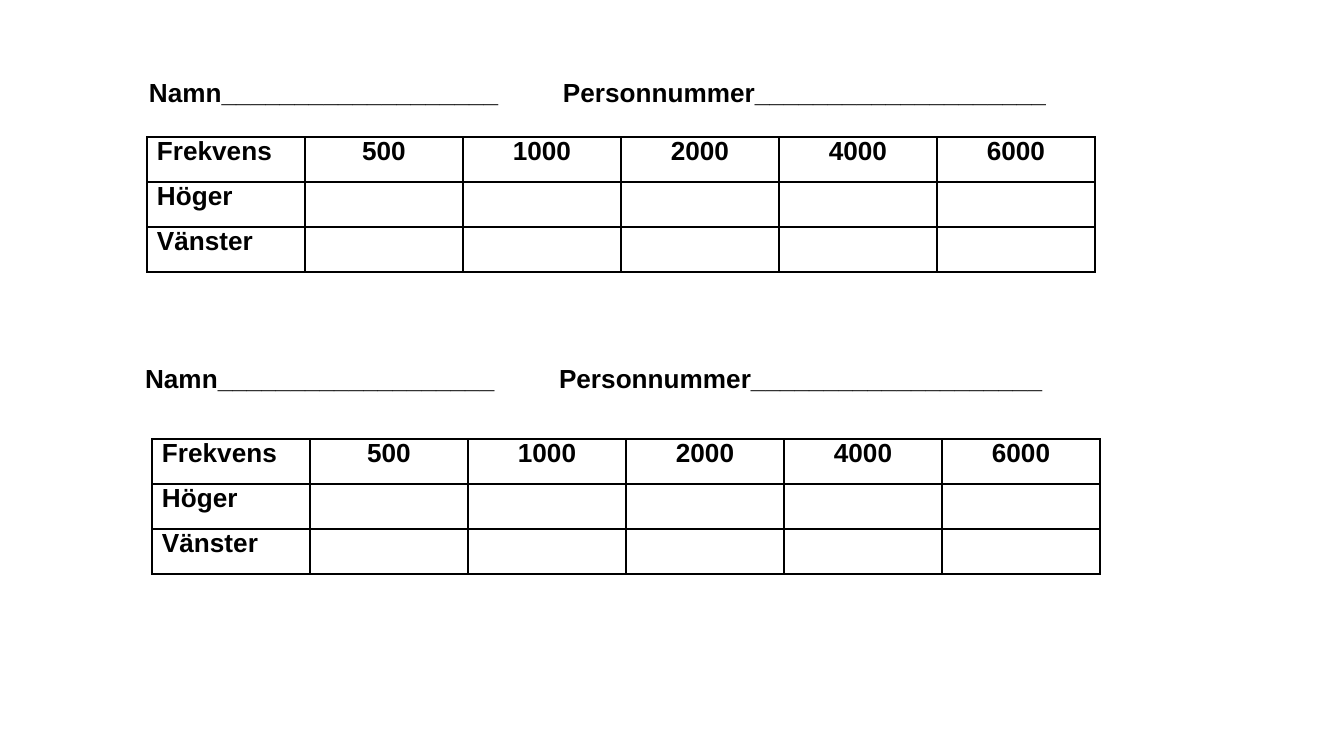
from lxml import etree
from pptx import Presentation
from pptx.dml.color import RGBColor
from pptx.enum.text import MSO_ANCHOR, PP_ALIGN
from pptx.oxml.ns import qn
from pptx.util import Pt

LEFT, CENTER = PP_ALIGN.LEFT, PP_ALIGN.CENTER
TOP = MSO_ANCHOR.TOP
BLACK = RGBColor(0, 0, 0)
PX = 914400 / 134.4

FIELDS = "Namn___________________\tPersonnummer____________________"
ROWS = [
    ["Frekvens", "500", "1000", "2000", "4000", "6000"],
    ["Höger", "", "", "", "", ""],
    ["Vänster", "", "", "", "", ""],
]
# left, top, width, height
LINES = [(136, 67, 986, 86), (132, 353, 929, 86)]
# left, top
GRIDS = [(152, 439), (147, 137)]
COL, ROW = 158, 45
TAB = 414


def px(n):
    return round(n * PX)


def style(para, align=LEFT):
    para.alignment = align
    font = para.font
    font.name, font.size, font.bold = "Arial", Pt(14), True
    font.color.rgb = BLACK


def add_line(slide, left, top, width, height):
    """Add one line with the two fields to fill in, split by a tab stop."""
    box = slide.shapes.add_textbox(px(left), px(top), px(width), px(height))
    frame = box.text_frame
    frame.word_wrap = True
    frame.vertical_anchor = TOP
    frame.margin_left = frame.margin_right = px(13)
    frame.margin_top = px(9)
    para = frame.paragraphs[0]
    para.text = FIELDS
    tabs = etree.SubElement(para._p.get_or_add_pPr(), qn("a:tabLst"))
    etree.SubElement(tabs, qn("a:tab"), pos=str(px(TAB)), algn="l")
    style(para)


def add_border(cell):
    props = cell._tc.get_or_add_tcPr()
    for side in ("lnL", "lnR", "lnT", "lnB"):
        line = etree.SubElement(props, qn(f"a:{side}"), w=str(Pt(1)))
        fill = etree.SubElement(line, qn("a:solidFill"))
        etree.SubElement(fill, qn("a:srgbClr"), val=str(BLACK))


def add_grid(slide, left, top):
    rows, cols = len(ROWS), len(ROWS[0])
    table = slide.shapes.add_table(
        rows, cols, px(left), px(top), px(cols * COL), px(rows * ROW)
    ).table
    table.first_row = table.horz_banding = False
    for col in table.columns:
        col.width = px(COL)
    for r, words in enumerate(ROWS):
        table.rows[r].height = px(ROW)
        for c, word in enumerate(words):
            cell = table.cell(r, c)
            cell.margin_left = cell.margin_right = px(10)
            cell.margin_top = cell.margin_bottom = 0
            add_border(cell)
            cell.fill.background()
            cell.text = word
            style(cell.text_frame.paragraphs[0], CENTER if c else LEFT)


def main():
    deck = Presentation()
    deck.slide_width, deck.slide_height = px(1344), px(756)
    slide = deck.slides.add_slide(deck.slide_layouts[6])
    for spot in LINES:
        add_line(slide, *spot)
    for spot in GRIDS:
        add_grid(slide, *spot)
    deck.save("out.pptx")


if __name__ == "__main__":
    main()
